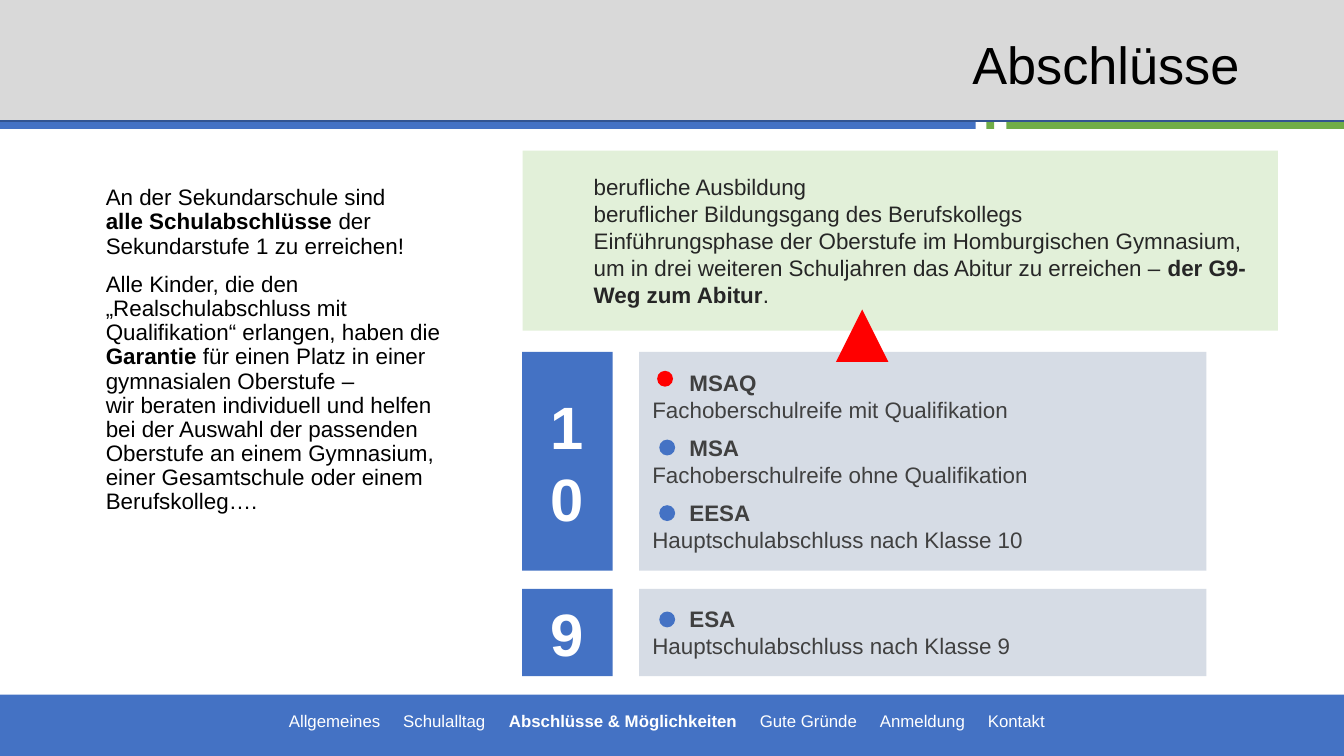
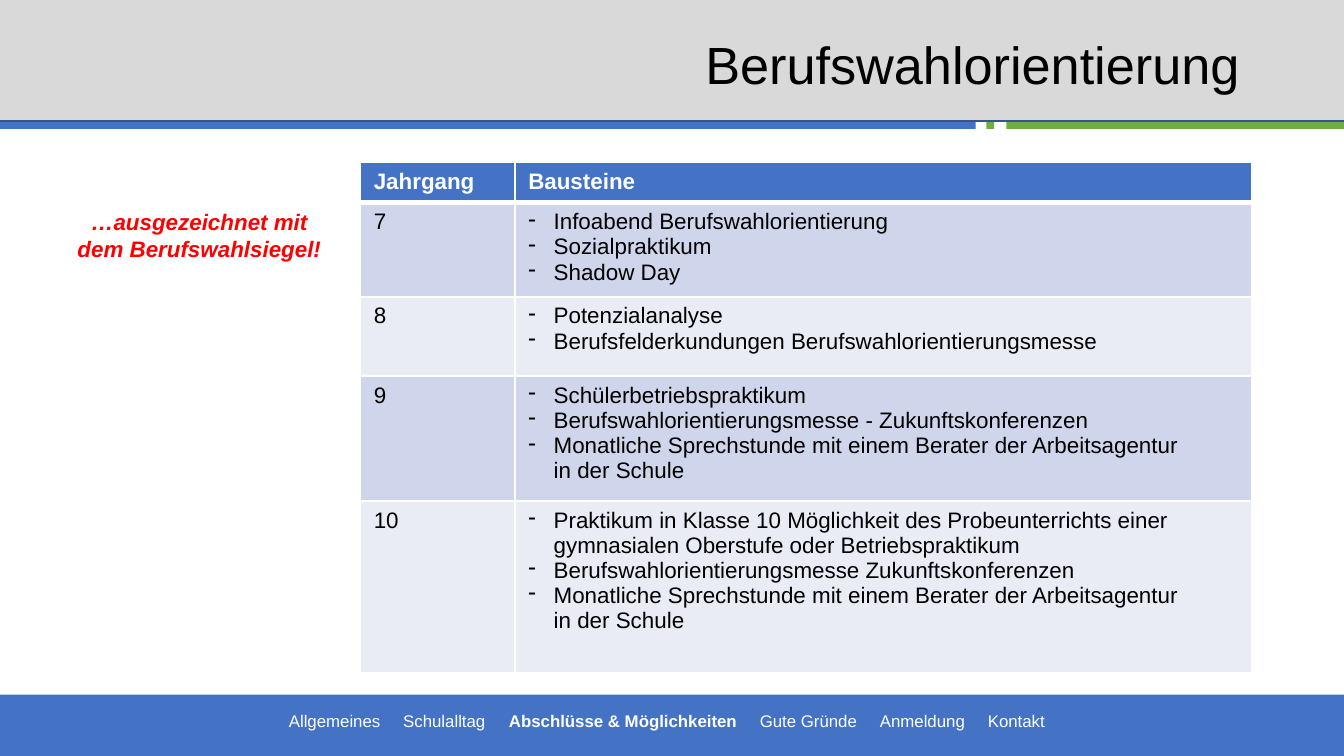
"""Build two slides on school leaving certificates and career orientation."""
from dataclasses import dataclass

from lxml import etree
from pptx import Presentation
from pptx import util as u
from pptx.dml import color
from pptx.enum import shapes, text
from pptx.oxml import ns

Cm, Pt = u.Cm, u.Pt
FONT = "Arial"
COLOURS = {
    "blue": "4472C4", "green": "70AD47", "red": "FF0000", "white": "FFFFFF",
    "black": "000000", "header": "D9D9D9", "header_line": "325491",
    "pale_blue": "D6DCE5", "pale_green": "E2F0D9", "grey": "404040",
    "dark": "262626", "band_odd": "CFD5EA", "band_even": "E9EBF5",
}
NAVIGATION = ("Allgemeines", "Schulalltag", "**Abschlüsse & Möglichkeiten**",
              "Gute Gründe", "Anmeldung", "Kontakt")
NAVIGATION_STOPS = (2.16, 4.16, 8.9, 11.17, 13.21)


@dataclass(frozen=True)
class Box:
    left: float
    top: float
    width: float
    height: float

    def lengths(self) -> tuple:
        return Cm(self.left), Cm(self.top), Cm(self.width), Cm(self.height)


@dataclass(frozen=True)
class Style:
    size: float = 12
    colour: str = "black"
    bold: bool = False
    italic: bool = False
    align: text.PP_ALIGN = text.PP_ALIGN.LEFT
    line_spacing: float = 1.0


@dataclass(frozen=True)
class Line:
    words: str
    bold: bool = False
    indent: float = 0
    before: float = 0
    after: float = 0
    bullet: str = ""
    stops: tuple = ()


@dataclass(frozen=True)
class Band:
    box: Box
    fill: str
    line: str = ""


@dataclass(frozen=True)
class Degree:
    name: str
    meaning: str


@dataclass(frozen=True)
class GradeBlock:
    grade: str
    top: float
    height: float
    degrees: tuple


@dataclass(frozen=True)
class Dot:
    left: float
    top: float
    fill: str = "blue"


BANDS = (
    Band(Box(-0.1, 13.13, 25.9, 1.32), "blue"),
    Band(Box(-0.48, -0.41, 26.29, 2.7), "header", "header_line"),
    Band(Box(-0.2, 2.31, 18.64, 0.13), "blue"),
    Band(Box(18.64, 2.31, 0.15, 0.13), "green"),
    Band(Box(19.02, 2.31, 7.29, 0.13), "green"),
)
INTRODUCTION = (
    Line("An der Sekundarschule sind \n**alle Schulabschlüsse** der \n"
         "Sekundarstufe 1 zu erreichen!"),
    Line("Alle Kinder, die den „Realschulabschluss mit Qualifikation“ erlangen, "
         "haben die **Garantie** für einen Platz in einer gymnasialen Oberstufe – \n"
         "wir beraten individuell und helfen \nbei der Auswahl der passenden "
         "Oberstufe an einem Gymnasium, einer Gesamtschule oder einem "
         "Berufskolleg….", before=7.5),
)
PATHWAYS = (
    "berufliche Ausbildung",
    "beruflicher Bildungsgang des Berufskollegs",
    "Einführungsphase der Oberstufe im Homburgischen Gymnasium, um in drei "
    "weiteren Schuljahren das Abitur zu erreichen – **der G9-Weg zum Abitur**.",
)
GRADE_BLOCKS = (
    GradeBlock("10", 6.65, 4.14, (
        Degree("MSAQ", "Fachoberschulreife mit Qualifikation"),
        Degree("MSA", "Fachoberschulreife ohne Qualifikation"),
        Degree("EESA", "Hauptschulabschluss nach Klasse 10"))),
    GradeBlock("9", 11.13, 1.65, (
        Degree("ESA", "Hauptschulabschluss nach Klasse 9"),)),
)
DOTS = (Dot(12.42, 7.01, "red"), Dot(12.46, 8.31), Dot(12.46, 9.55), Dot(12.46, 11.56))
CONSULTATION = ("Monatliche Sprechstunde mit einem Berater der Arbeitsagentur \n"
                "in der Schule")
MODULES = {
    "7": ("Infoabend Berufswahlorientierung", "Sozialpraktikum", "Shadow Day"),
    "8": ("Potenzialanalyse",
          "Berufsfelderkundungen Berufswahlorientierungsmesse"),
    "9": ("Schülerbetriebspraktikum",
          "Berufswahlorientierungsmesse - Zukunftskonferenzen", CONSULTATION),
    "10": ("Praktikum in Klasse 10 Möglichkeit des Probeunterrichts einer "
           "gymnasialen Oberstufe oder Betriebspraktikum",
           "Berufswahlorientierungsmesse Zukunftskonferenzen", CONSULTATION),
}
COLUMN_WIDTHS = (2.92, 13.92)
ROW_HEIGHTS = (0.74, 1.7, 1.5, 2.36, 3.25)


def rgb(name: str) -> color.RGBColor:
    return color.RGBColor.from_string(COLOURS[name])


def add_element(parent, tag: str, **attributes: str):
    element = etree.SubElement(parent, ns.qn(tag))
    for key, value in attributes.items():
        element.set(key, value)
    return element


def add_words(paragraph, words: str, bold: bool) -> None:
    pieces = words.split("**")
    for index, piece in enumerate(pieces):
        for number, part in enumerate(piece.split("\n")):
            if number:
                paragraph.add_line_break()
            if part:
                run = paragraph.add_run()
                run.text = part
                if len(pieces) > 1:
                    run.font.bold = bold or index % 2 == 1


def format_paragraph(paragraph, line: Line, style: Style) -> None:
    properties = paragraph._p.get_or_add_pPr()
    if line.indent:
        properties.set("marL", str(Cm(line.indent)))
    if line.bullet:
        properties.set("indent", str(-Cm(line.indent)))
        add_element(properties, "a:buFontTx")
        add_element(properties, "a:buChar", char=line.bullet)
    if line.stops:
        stops = add_element(properties, "a:tabLst")
        for stop in line.stops:
            add_element(stops, "a:tab", pos=str(Cm(stop)), algn="l")
    paragraph.alignment = style.align
    paragraph.line_spacing = style.line_spacing
    paragraph.space_before = Pt(line.before)
    paragraph.space_after = Pt(line.after)
    font = paragraph.font
    font.name, font.size = FONT, Pt(style.size)
    font.color.rgb = rgb(style.colour)
    font.italic = style.italic
    if "**" not in line.words:
        font.bold = line.bold or style.bold


def write(frame, lines: tuple, style: Style) -> None:
    frame.word_wrap = True
    for index, line in enumerate(lines):
        paragraph = frame.add_paragraph() if index else frame.paragraphs[0]
        format_paragraph(paragraph, line, style)
        add_words(paragraph, line.words, line.bold or style.bold)


def add_filled(slide, kind: shapes.MSO_SHAPE, box: Box, fill: str, line: str = ""):
    shape = slide.shapes.add_shape(kind, *box.lengths())
    shape.shadow.inherit = False
    shape.fill.solid()
    shape.fill.fore_color.rgb = rgb(fill)
    if line:
        shape.line.color.rgb = rgb(line)
        shape.line.width = Pt(1)
    else:
        shape.line.fill.background()
    return shape


def add_panel(slide, box: Box, fill: str, lines: tuple, style: Style) -> None:
    shape = add_filled(slide, shapes.MSO_SHAPE.RECTANGLE, box, fill)
    shape.text_frame.vertical_anchor = text.MSO_ANCHOR.MIDDLE
    write(shape.text_frame, lines, style)


def add_text(slide, box: Box, lines: tuple, style: Style,
             anchor: text.MSO_ANCHOR = text.MSO_ANCHOR.TOP):
    frame = slide.shapes.add_textbox(*box.lengths()).text_frame
    frame.vertical_anchor = anchor
    write(frame, lines, style)
    return frame


def add_base_slide(presentation, title: str):
    slide = presentation.slides.add_slide(presentation.slide_layouts[6])
    for band in BANDS:
        add_filled(slide, shapes.MSO_SHAPE.RECTANGLE, band.box, band.fill, band.line)
    add_text(slide, Box(9.4, 0.51, 14.27, 1.55), (Line(title),),
             Style(28, align=text.PP_ALIGN.RIGHT, line_spacing=0.9),
             text.MSO_ANCHOR.MIDDLE)
    navigation = Line("\t".join(NAVIGATION), stops=NAVIGATION_STOPS)
    frame = add_text(slide, Box(4.09, 13.44, 17.12, 0.71), (navigation,),
                     Style(9, "white"))
    frame.margin_left, frame.margin_top = Cm(1.37), 0
    return slide


def add_grade_block(slide, block: GradeBlock) -> None:
    add_panel(slide, Box(9.87, block.top, 1.71, block.height), "blue",
              (Line(block.grade),),
              Style(32, "white", bold=True, align=text.PP_ALIGN.CENTER))
    after = 6 if len(block.degrees) > 1 else 0
    lines = []
    for degree in block.degrees:
        lines += [Line(degree.name, bold=True, indent=0.7),
                  Line(degree.meaning, after=after)]
    add_panel(slide, Box(12.08, block.top, 10.72, block.height), "pale_blue",
              tuple(lines), Style(colour="grey"))


def build_degrees(presentation) -> None:
    slide = add_base_slide(presentation, "Abschlüsse")
    add_text(slide, Box(1.75, 3.4, 7.62, 9.47), INTRODUCTION, Style(line_spacing=0.9))
    for block in GRADE_BLOCKS:
        add_grade_block(slide, block)
    add_panel(slide, Box(9.88, 2.85, 14.27, 3.4), "pale_green",
              tuple(Line(words, indent=1.09) for words in PATHWAYS),
              Style(colour="dark"))
    add_filled(slide, shapes.MSO_SHAPE.ISOSCELES_TRIANGLE,
               Box(15.8, 5.85, 0.99, 0.99), "red")
    for dot in DOTS:
        add_filled(slide, shapes.MSO_SHAPE.OVAL,
                   Box(dot.left, dot.top, 0.3, 0.3), dot.fill)


def fill_cell(cell, row: int, lines: tuple) -> None:
    properties = cell._tc.get_or_add_tcPr()
    widths = {"L": 1, "R": 1, "T": 3 if row == 1 else 1, "B": 3 if row == 0 else 1}
    for side, width in widths.items():
        border = add_element(properties, f"a:ln{side}", w=str(Pt(width)))
        solid = add_element(border, "a:solidFill")
        add_element(solid, "a:srgbClr", val=COLOURS["white"])
    cell.fill.solid()
    fill = "blue" if row == 0 else "band_odd" if row % 2 else "band_even"
    cell.fill.fore_color.rgb = rgb(fill)
    style = Style(colour="white", bold=True) if row == 0 else Style()
    write(cell.text_frame, lines, style)


def build_orientation(presentation) -> None:
    slide = add_base_slide(presentation, "Berufswahlorientierung")
    box = Box(6.81, 3.07, sum(COLUMN_WIDTHS), sum(ROW_HEIGHTS))
    table = slide.shapes.add_table(
        len(ROW_HEIGHTS), len(COLUMN_WIDTHS), *box.lengths()).table
    for column, width in zip(table.columns, COLUMN_WIDTHS):
        column.width = Cm(width)
    for row, height in zip(table.rows, ROW_HEIGHTS):
        row.height = Cm(height)
    contents = [((Line("Jahrgang"),), (Line("Bausteine"),))]
    for grade, modules in MODULES.items():
        items = tuple(Line(words, indent=0.48, bullet="-") for words in modules)
        contents.append(((Line(grade),), items))
    for row, cells in enumerate(contents):
        for column, lines in enumerate(cells):
            fill_cell(table.cell(row, column), row, lines)
    add_text(slide, Box(1.09, 3.81, 5.36, 1.27),
             (Line("…ausgezeichnet mit dem Berufswahlsiegel!"),),
             Style(colour="red", bold=True, italic=True, align=text.PP_ALIGN.CENTER))


def main() -> None:
    presentation = Presentation()
    presentation.slide_width, presentation.slide_height = Cm(25.4), Cm(14.29)
    build_degrees(presentation)
    build_orientation(presentation)
    presentation.save("out.pptx")


if __name__ == "__main__":
    main()
